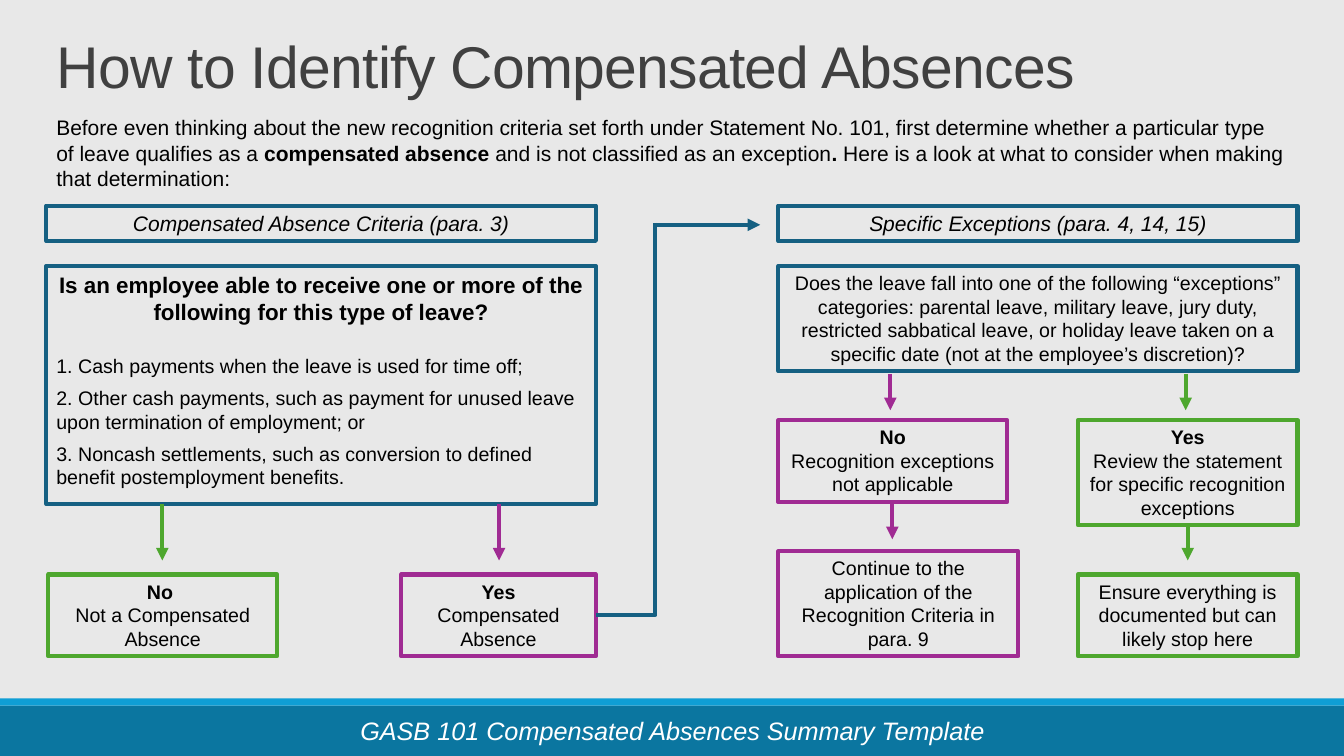
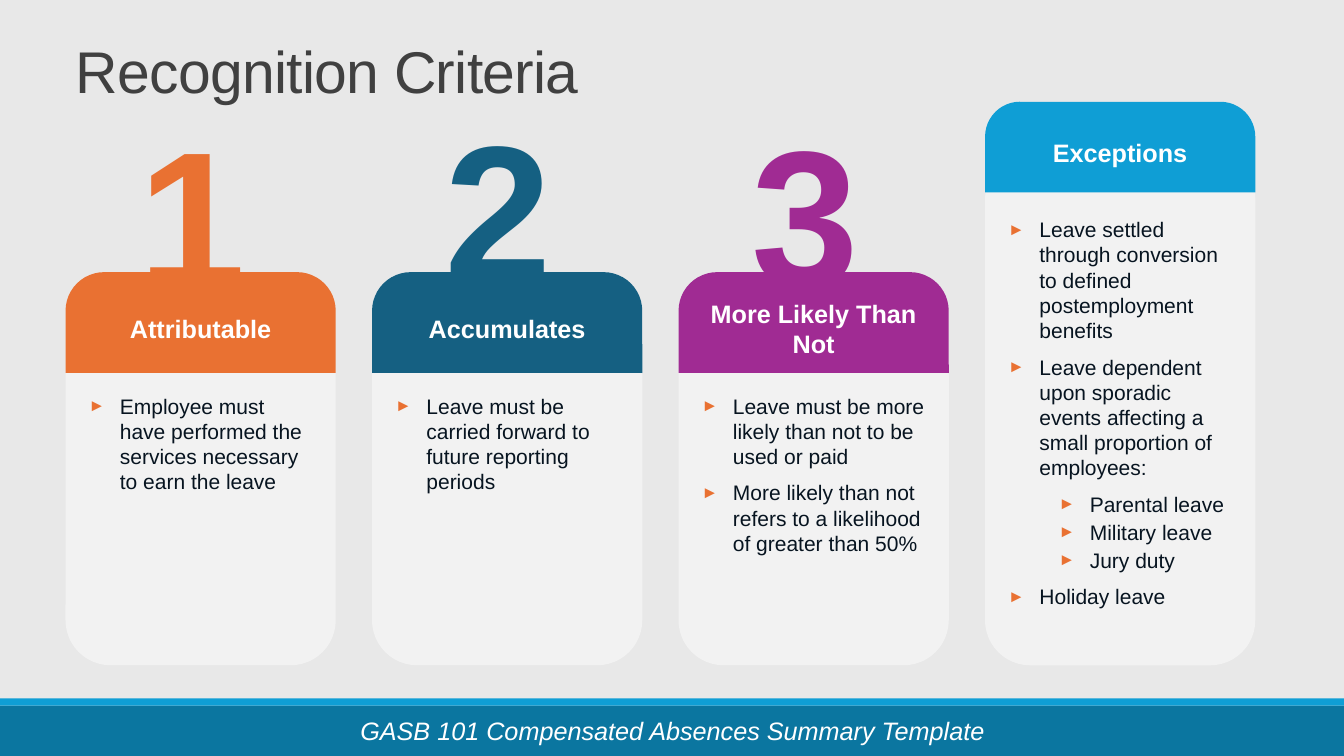
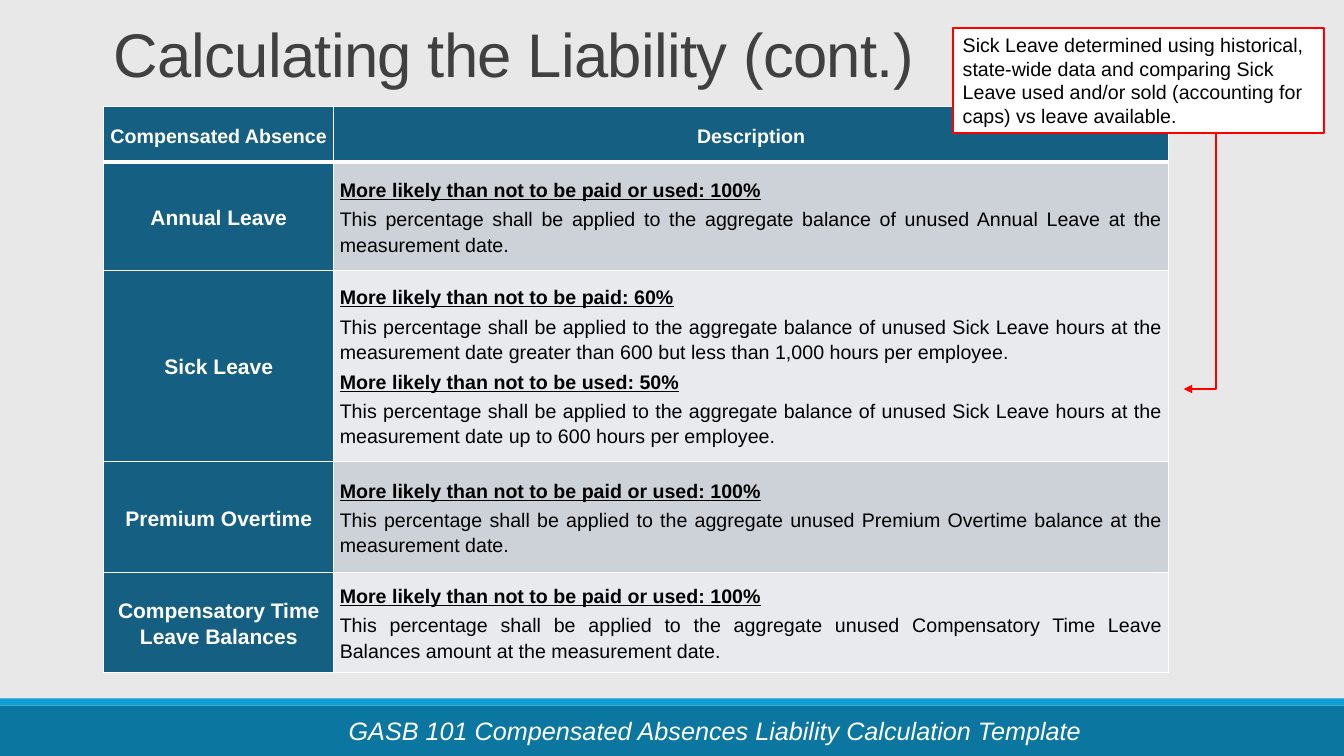
import pptx
import pptx.dml.color
import pptx.enum.shapes
import pptx.enum.text
import pptx.oxml
import pptx.oxml.ns
import pptx.util
from lxml import etree

Inches = pptx.util.Inches
Pt = pptx.util.Pt
SHAPE = pptx.enum.shapes.MSO_SHAPE
CONNECTOR = pptx.enum.shapes.MSO_CONNECTOR
ANCHOR = pptx.enum.text.MSO_ANCHOR
ALIGN = pptx.enum.text.PP_ALIGN
qn = pptx.oxml.ns.qn

FONT = "Arial"
PAGE, CARD, WHITE, BLACK = "E8E8E8", "F2F2F2", "FFFFFF", "000000"
TITLE, BODY = "404040", "071420"
BLUE, SKY, OCEAN = "156082", "0F9ED5", "0B76A0"
PURPLE, GREEN, ORANGE, RED = "A02B93", "4EA72E", "E97132", "FF0000"
ROW_FILLS = ("CCD2D8", "E8EAED")
SLIDE_WIDTH = 13.33


def rgb(hex_color):
    return pptx.dml.color.RGBColor.from_string(hex_color)


def add_xml(parent, tag, **attributes):
    return etree.SubElement(parent, qn(tag), attributes)


def write(frame, paragraphs, size, color, align=ALIGN.LEFT, bold=False, italic=False,
          before=0, after=0, spacing=None):
    """Fill a text frame; text between ** marks is bold."""
    frame.word_wrap = True
    for index, text in enumerate(paragraphs):
        paragraph = frame.paragraphs[0] if index == 0 else frame.add_paragraph()
        paragraph.alignment = align
        paragraph.space_before, paragraph.space_after = Pt(before), Pt(after)
        if spacing:
            paragraph.line_spacing = spacing
        for part, words in enumerate(text.split("**")):
            if not words:
                continue
            run = paragraph.add_run()
            run.text = words
            run.font.name, run.font.size = FONT, Pt(size)
            run.font.color.rgb = rgb(color)
            run.font.bold = bold or part % 2 == 1
            run.font.italic = italic
    return frame.paragraphs


def set_insets(target, left, top, right, bottom):
    target.margin_left, target.margin_top = Inches(left), Inches(top)
    target.margin_right, target.margin_bottom = Inches(right), Inches(bottom)


def add_bullet(paragraph, level):
    paragraph.level = level
    properties = paragraph._p.get_or_add_pPr()
    properties.set("marL", str(Inches(0.31 + 0.5 * level)))
    properties.set("indent", str(-Inches(0.31)))
    add_xml(add_xml(properties, "a:buClr"), "a:srgbClr", val=ORANGE)
    add_xml(properties, "a:buSzPct", val="80000")
    add_xml(properties, "a:buFont", typeface=FONT)
    add_xml(properties, "a:buChar", char="►")


def set_borders(cell, bottom=1):
    properties = cell._tc.get_or_add_tcPr()
    sides = {"a:lnL": 1, "a:lnR": 1, "a:lnT": 1, "a:lnB": bottom}
    for position, (tag, width) in enumerate(sides.items()):
        border = etree.Element(qn(tag), w=str(Pt(width)))
        add_xml(add_xml(border, "a:solidFill"), "a:srgbClr", val=WHITE)
        properties.insert(position, border)


class Deck:
    def __init__(self):
        self.presentation = pptx.Presentation()
        self.presentation.slide_width = Inches(SLIDE_WIDTH)
        self.presentation.slide_height = Inches(7.5)
        background = self.presentation.slide_master.background.fill
        background.solid()
        background.fore_color.rgb = rgb(PAGE)
        self.slide = None

    def start(self, title, title_at, footer, footer_at, size=42, spacing=0.85):
        layout = self.presentation.slide_layouts.get_by_name("Title Only")
        self.slide = self.presentation.slides.add_slide(layout)
        self.shape(SHAPE.RECTANGLE, (0, 7, SLIDE_WIDTH, 0.5), fill=OCEAN)
        self.shape(SHAPE.RECTANGLE, (0, 6.93, SLIDE_WIDTH, 0.07), fill=SKY)
        heading = self.slide.shapes.title
        heading.left, heading.top, heading.width, heading.height = map(Inches, title_at)
        frame = heading.text_frame
        frame.auto_size = pptx.enum.text.MSO_AUTO_SIZE.NONE
        frame.vertical_anchor = ANCHOR.TOP
        for paragraph in write(frame, [title], size, TITLE, spacing=spacing):
            for run in paragraph.runs:
                run._r.get_or_add_rPr().set("spc", "-50")
        self.text(footer_at, [footer], 18, WHITE, align=ALIGN.CENTER, italic=True)

    def text(self, at, paragraphs, size, color, insets=(0.1, 0.05, 0.1, 0.05), **style):
        frame = self.slide.shapes.add_textbox(*map(Inches, at)).text_frame
        set_insets(frame, *insets)
        return write(frame, paragraphs, size, color, **style)

    def shape(self, preset, at, fill=None, line=None, line_width=3):
        shape = self.slide.shapes.add_shape(preset, *map(Inches, at))
        shape.shadow.inherit = False
        if fill:
            shape.fill.solid()
            shape.fill.fore_color.rgb = rgb(fill)
        else:
            shape.fill.background()
        if line:
            shape.line.color.rgb = rgb(line)
            shape.line.width = Pt(line_width)
        else:
            shape.line.fill.background()
        return shape

    def box(self, at, color, paragraphs, size=14, fill=None, line_width=3,
            align=ALIGN.CENTER, **style):
        frame = self.shape(SHAPE.RECTANGLE, at, fill, color, line_width).text_frame
        frame.vertical_anchor = ANCHOR.TOP
        return write(frame, paragraphs, size, BLACK, align=align, **style)

    def line(self, start, end, color, width=3, arrow=True, kind=CONNECTOR.STRAIGHT):
        connector = self.slide.shapes.add_connector(kind, *map(Inches, start + end))
        connector.line.color.rgb = rgb(color)
        connector.line.width = Pt(width)
        if arrow:
            add_xml(connector.line._get_or_add_ln(), "a:tailEnd", type="triangle")
        add_xml(connector._element.spPr, "a:effectLst")
        return connector

    def elbow(self, start, end, color, width, arrow):
        """Run down from start, then left to end: a one-bend connector turned by 90°."""
        across, down = start[0] - end[0], end[1] - start[1]
        left = (start[0] + end[0] - down) / 2
        top = (start[1] + end[1] - across) / 2
        connector = self.line((left, top), (left + down, top + across), color, width,
                              arrow, CONNECTOR.ELBOW)
        properties = connector._element.spPr
        properties.find(qn("a:xfrm")).set("rot", "5400000")
        properties.find(qn("a:prstGeom")).set("prst", "bentConnector2")

    def card(self, left, top, header_height, body_top, bottom, heading, color, items,
             number=None, number_top=0):
        width = 2.68
        body = self.shape(SHAPE.ROUNDED_RECTANGLE,
                          (left, body_top, width, bottom - body_top), fill=CARD)
        frame = body.text_frame
        frame.vertical_anchor = ANCHOR.TOP
        set_insets(frame, 0.1, 0.5, 0.1, 0.05)
        paragraphs = write(frame, [text for text, _ in items], 15, BODY, before=2, after=6)
        levels = [level for _, level in items]
        for paragraph, level, following in zip(paragraphs, levels, levels[1:] + [0]):
            if level and following:
                paragraph.space_after = Pt(0)
            add_bullet(paragraph, level)
        if number:
            self.text((left + 0.72, number_top, 1.24, 2.01), [number], 138, color,
                      insets=(0, 0.04, 0, 0), bold=True, after=6, spacing=0.85)
        header = self.shape(SHAPE.ROUND_2_SAME_RECTANGLE,
                            (left, top, width, header_height), fill=color)
        header.adjustments[0] = 0.384
        header.text_frame.vertical_anchor = ANCHOR.MIDDLE
        set_insets(header.text_frame, 0.08, 0.08, 0.08, 0.08)
        write(header.text_frame, [heading], 18, WHITE, align=ALIGN.CENTER, bold=True)

    def cell(self, cell, paragraphs, fill, size, color, bottom=1, **style):
        cell.fill.solid()
        cell.fill.fore_color.rgb = rgb(fill)
        cell.vertical_anchor = ANCHOR.MIDDLE
        set_insets(cell, 0.06, 0, 0.06, 0)
        set_borders(cell, bottom)
        return write(cell.text_frame, paragraphs, size, color, spacing=1.15, **style)

    def table(self, at, widths, heights, headings, rows):
        table = self.slide.shapes.add_table(len(heights), len(widths),
                                            *map(Inches, at)).table
        for column, width in zip(table.columns, widths):
            column.width = Inches(width)
        for row, height in zip(table.rows, heights):
            row.height = Inches(height)
        label_style = dict(align=ALIGN.CENTER, bold=True, after=8)
        for column, heading in enumerate(headings):
            self.cell(table.cell(0, column), [heading], BLUE, 14, WHITE, bottom=3,
                      **label_style)
        for index, (label, description) in enumerate(rows, 1):
            self.cell(table.cell(index, 0), [label], BLUE, 15, WHITE, **label_style)
            paragraphs = self.cell(table.cell(index, 1), description,
                                   ROW_FILLS[(index - 1) % 2], 14, BLACK,
                                   align=ALIGN.JUSTIFY, after=3)
            for paragraph in paragraphs:
                for run in paragraph.runs:
                    run.font.underline = run.font.bold


SUMMARY = "GASB 101 Compensated Absences Summary Template"
SUMMARY_AT = (3.43, 7.05, 6.48, 0.4)


def identify_slide(deck):
    deck.start("How to Identify Compensated Absences", (0.46, 0.35, 10.67, 0.6),
               SUMMARY, SUMMARY_AT)
    deck.text((0.46, 1.09, 12.39, 0.86), [
        "Before even thinking about the new recognition criteria set forth under Statement "
        "No. 101, first determine whether a particular type of leave qualifies as a "
        "**compensated absence **and is not classified as an exception**.** Here is a look "
        "at what to consider when making that determination:"], 15, BLACK)

    for left, width, heading in ((0.46, 5.45, "Compensated Absence Criteria (para. 3)"),
                                 (7.72, 5.15, "Specific Exceptions (para. 4, 14, 15)")):
        deck.box((left, 2.04, width, 0.35), BLUE, [heading], 15, italic=True)

    question, *criteria = deck.box((0.46, 2.64, 5.45, 2.36), BLUE, [
        "**Is an employee able to receive one or more of the following for this type of "
        "leave?**",
        "1. Cash payments when the leave is used for time off;",
        "2. Other cash payments, such as payment for unused leave upon termination of "
        "employment; or",
        "3. Noncash settlements, such as conversion to defined benefit postemployment "
        "benefits."], align=ALIGN.LEFT, after=6)
    question.alignment = ALIGN.CENTER
    question.space_after = Pt(21)
    question.runs[0].font.size = Pt(16)

    for at, color, paragraphs in (
            ((0.48, 5.7, 2.27, 0.81), GREEN, ["**No **", "Not a Compensated Absence"]),
            ((3.98, 5.7, 1.93, 0.81), PURPLE, ["**Yes**", "Compensated Absence"]),
            ((7.72, 2.64, 5.15, 1.04), BLUE, [
                "Does the leave fall into one of the following “exceptions” categories: "
                "parental leave, military leave, jury duty, restricted sabbatical leave, or "
                "holiday leave taken on a specific date (not at the employee’s "
                "discretion)?"]),
            ((7.72, 4.17, 2.27, 0.81), PURPLE,
             ["**No**", "Recognition exceptions not applicable"]),
            ((10.69, 4.17, 2.18, 1.04), GREEN,
             ["**Yes**", "Review the statement for specific recognition exceptions"]),
            ((7.72, 5.47, 2.38, 1.04), PURPLE,
             ["Continue to the application of the Recognition Criteria in para. 9"]),
            ((10.69, 5.7, 2.18, 0.81), GREEN,
             ["Ensure everything is documented but can likely stop here"])):
        deck.box(at, color, paragraphs)

    for x, top, bottom, color in ((1.61, 5, 5.56, GREEN), (4.95, 5, 5.56, PURPLE),
                                  (8.83, 3.71, 4.07, PURPLE), (11.76, 3.71, 4.07, GREEN),
                                  (8.85, 4.98, 5.35, PURPLE), (11.78, 5.21, 5.56, GREEN)):
        deck.line((x, top), (x, bottom), color)
    deck.elbow((6.5, 2.21), (5.91, 6.1), BLUE, 3, arrow=False)
    deck.line((6.5, 2.23), (7.54, 2.23), BLUE)


def criteria_slide(deck):
    deck.start("Recognition Criteria", (0.65, 0.4, 10.67, 0.6), SUMMARY, SUMMARY_AT)
    criteria = (
        ("Attributable", ORANGE, 1.25,
         ["Employee must have performed the services necessary to earn the leave"]),
        ("Accumulates", BLUE, 1.19,
         ["Leave must be carried forward to future reporting periods"]),
        ("More Likely Than Not", PURPLE, 1.24,
         ["Leave must be more likely than not to be used or paid",
          "More likely than not refers to a likelihood of greater than 50%"]))
    first_left, pitch = 0.65, 3.04
    for index, (heading, color, number_top, items) in enumerate(criteria):
        deck.card(first_left + index * pitch, 2.7, 1, 3.27, 6.6, heading, color,
                  [(item, 0) for item in items], str(index + 1), number_top)
    deck.card(first_left + 3 * pitch, 1.01, 0.9, 1.52, 6.6, "Exceptions", SKY, [
        ("Leave settled through conversion to defined postemployment benefits", 0),
        ("Leave dependent upon sporadic events affecting a small proportion of employees:", 0),
        ("Parental leave", 1),
        ("Military leave", 1),
        ("Jury duty", 1),
        ("Holiday leave", 0)])


def liability_slide(deck):
    deck.start("Calculating the Liability (cont.)", (1.03, 0.28, 9.74, 0.67),
               "GASB 101 Compensated Absences Liability Calculation Template",
               (3.25, 7.05, 7.68, 0.4), size=44, spacing=0.75)
    paid_or_used = "**More likely than not to be paid or used: 100%**"
    applied = "This percentage shall be applied to the aggregate "
    sick_hours = applied + "balance of unused Sick Leave hours at the measurement date "
    deck.table((1.03, 1.06, 10.56, 5.61), (2.28, 8.28), (0.55, 1.07, 1.9, 1.1, 0.99),
               ("Compensated Absence", "Description"), (
        ("Annual Leave", [
            paid_or_used,
            applied + "balance of unused Annual Leave at the measurement date."]),
        ("Sick Leave", [
            "**More likely than not to be paid: 60%**",
            sick_hours + "greater than 600 but less than 1,000 hours per employee.",
            "**More likely than not to be used: 50%**",
            sick_hours + "up to 600 hours per employee."]),
        ("Premium Overtime", [
            paid_or_used,
            applied + "unused Premium Overtime balance at the measurement date."]),
        ("Compensatory Time Leave Balances", [
            paid_or_used,
            applied + "unused Compensatory Time Leave Balances amount at the "
                      "measurement date."])))
    deck.box((9.45, 0.28, 3.68, 1.04), RED, [
        "Sick Leave determined using historical, state-wide data and comparing Sick Leave "
        "used and/or sold (accounting for caps) vs leave available."],
        fill=WHITE, line_width=1.5, align=ALIGN.LEFT)
    deck.elbow((12.06, 1.33), (11.74, 3.86), RED, 1, arrow=True)


def main():
    deck = Deck()
    identify_slide(deck)
    criteria_slide(deck)
    liability_slide(deck)
    deck.presentation.save("out.pptx")


if __name__ == "__main__":
    main()
